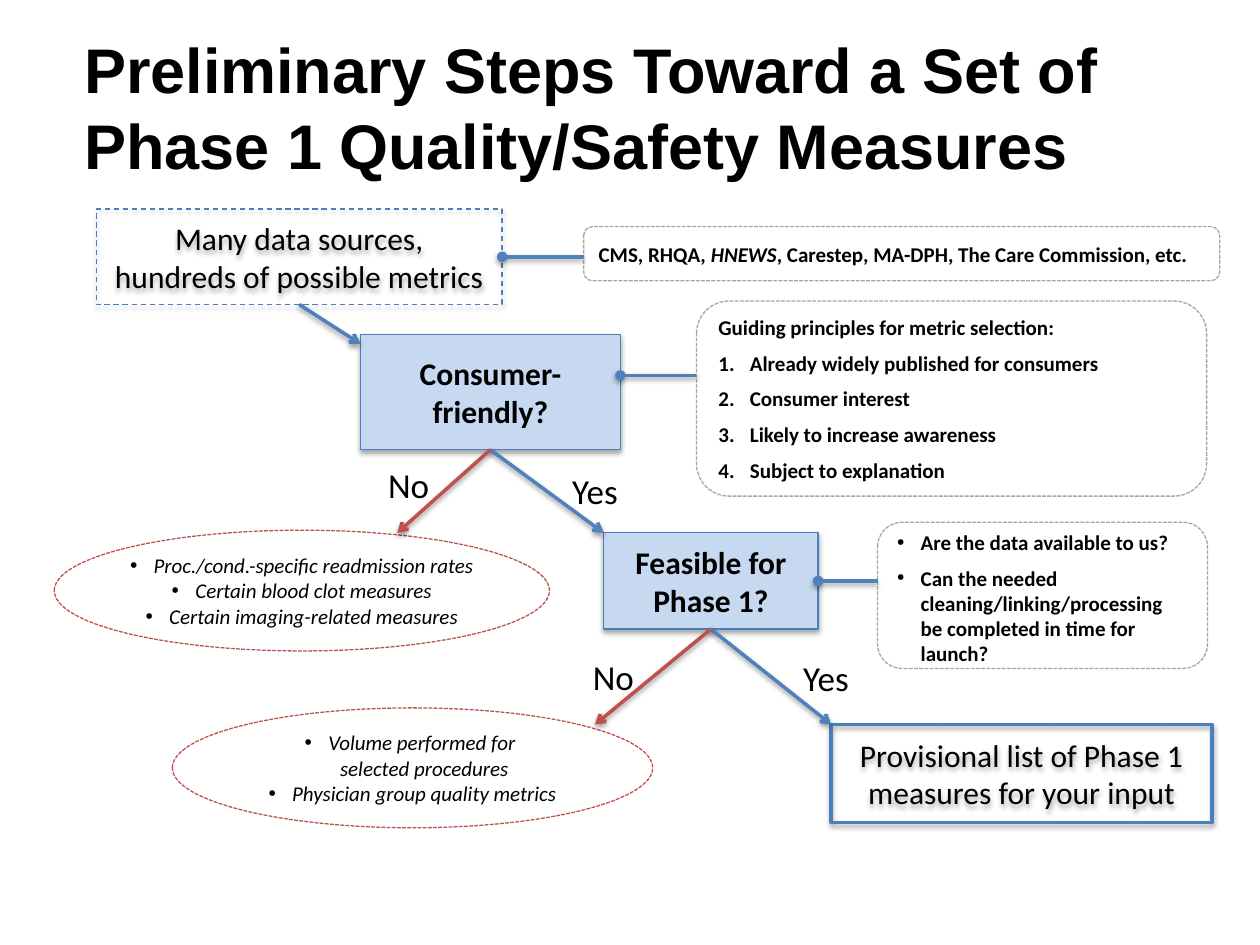
from lxml.etree import SubElement
from pptx import Presentation
from pptx.dml.color import RGBColor
from pptx.enum.dml import MSO_LINE
from pptx.enum.shapes import MSO_CONNECTOR, MSO_SHAPE
from pptx.enum.text import MSO_ANCHOR, PP_ALIGN
from pptx.oxml.ns import qn
from pptx.util import Pt

HUES = {
    "ink": "000000", "pale": "C6D9F1", "edge": "4B7EBC", "blue": "4F81BD",
    "red": "C0504D", "gray": "A6A6A6", "white": "FFFFFF",
}


def hue(name):
    return RGBColor.from_string(HUES[name])


def bullet(para, mark, dent):
    props = para._p.get_or_add_pPr()
    props.set("marL", str(Pt(dent)))
    props.set("indent", str(-Pt(dent)))
    if mark == "1.":
        SubElement(props, qn("a:buFont")).set("typeface", "+mj-lt")
        SubElement(props, qn("a:buAutoNum")).set("type", "arabicPeriod")
    else:
        SubElement(props, qn("a:buFont")).set("typeface", "Arial")
        SubElement(props, qn("a:buChar")).set("char", mark)


def write(shape, items, size=18, face="Calibri", bold=False, slant=False,
          align=PP_ALIGN.CENTER, anchor=MSO_ANCHOR.MIDDLE,
          inset=(7.2, 3.6, 7.2, 3.6), mark=None, start=0, dent=13.5, gap=0):
    frame = shape.text_frame
    frame.word_wrap = True
    frame.vertical_anchor = anchor
    frame.margin_left, frame.margin_top, frame.margin_right, frame.margin_bottom = map(Pt, inset)
    for row, item in enumerate(items):
        para = frame.add_paragraph() if row else frame.paragraphs[0]
        para.alignment = align
        if row and gap:
            para.space_before = Pt(gap)
        if mark and row >= start:
            bullet(para, mark, dent)
        parts = [item] if isinstance(item, str) else item
        for turn, part in enumerate(parts):
            for count, line in enumerate(part.split("\n")):
                if count:
                    para.add_line_break()
                run = para.add_run()
                run.text = line
                font = run.font
                font.name, font.size, font.bold = face, Pt(size), bold
                font.italic = slant or turn % 2 == 1
                font.color.rgb = hue("ink")
        for stop in para._p.findall(qn("a:br")):
            SubElement(stop, qn("a:rPr")).set("sz", str(size * 100))


def shade(effects, far, alpha):
    drop = SubElement(effects, qn("a:outerShdw"), blurRad=str(Pt(3.1)),
                      dist=str(Pt(far)), dir="5400000", rotWithShape="0")
    tone = SubElement(drop, qn("a:srgbClr"), val=HUES["ink"])
    SubElement(tone, qn("a:alpha"), val=str(alpha * 1000))


def outline(slide, kind, box, edge, fill=None, width=0.75, dash=None):
    shape = slide.shapes.add_shape(kind, *map(Pt, box))
    shape.shadow.inherit = False
    if fill:
        shape.fill.solid()
        shape.fill.fore_color.rgb = hue(fill)
    else:
        shape.fill.background()
    shape.line.color.rgb = hue(edge)
    shape.line.width = Pt(width)
    if dash:
        shape.line.dash_style = dash
    return shape


def link(slide, start, end, color, tip):
    line = slide.shapes.add_connector(MSO_CONNECTOR.STRAIGHT, *map(Pt, start + end))
    line.line.color.rgb = hue(color)
    line.line.width = Pt(2)
    SubElement(line.line._ln, qn("a:tailEnd")).set("type", tip)
    shade(SubElement(line._element.spPr, qn("a:effectLst")), 1.6, 38)
    return line


def title(slide, box, words):
    head = slide.shapes.add_textbox(*map(Pt, box))
    write(head, [words], size=36, face="Arial", bold=True, align=PP_ALIGN.LEFT)


def step(slide, box, words, bold=False, **look):
    shape = outline(slide, MSO_SHAPE.RECTANGLE, box, "edge", **look)
    shade(shape._element.spPr.find(qn("a:effectLst")), 1.8, 35)
    write(shape, [words], bold=bold)
    return shape


def note(slide, box, items, **form):
    shape = outline(slide, MSO_SHAPE.ROUNDED_RECTANGLE, box, "gray", dash=MSO_LINE.SQUARE_DOT)
    write(shape, items, size=12, bold=True, align=PP_ALIGN.LEFT, gap=6, **form)


def reject(slide, box, items):
    shape = outline(slide, MSO_SHAPE.OVAL, box, "red", "white", dash=MSO_LINE.SQUARE_DOT)
    write(shape, items, size=12, slant=True, mark="•", inset=(0, 3.6, 0, 3.6))


def fork(slide, box, node, ways):
    x, y, w, h = box
    root = (x + w / 2, y + h)
    for word, color, end, tag, width in ways:
        line = link(slide, root, end, color, "arrow")
        line.begin_connect(node, 2)
        label = slide.shapes.add_textbox(Pt(root[0] + tag[0]), Pt(root[1] + tag[1]),
                                         Pt(width), Pt(31.5))
        write(label, [word], size=20, anchor=MSO_ANCHOR.TOP)


def main():
    deck = Presentation()
    deck.slide_width, deck.slide_height = Pt(720), Pt(540)
    slide = deck.slides.add_slide(deck.slide_layouts[6])

    pool = (55, 119.5, 232, 54.5)
    ask = (206, 191, 148.5, 66)
    test = (345, 304.5, 122.5, 55)
    goal = (475, 414, 217.5, 56)
    cite = (333.5, 129.5, 363.5, 31)
    guide = (398, 172, 291.5, 111.5)
    data = (501.5, 298.5, 188.5, 83.5)

    title(slide, (41, 26.5, 619, 68.5),
          "Preliminary Steps Toward a Set of Phase 1 Quality/Safety Measures")
    source = step(slide, pool, "Many data sources,\nhundreds of possible metrics",
                  dash=MSO_LINE.DASH)
    friend = step(slide, ask, "Consumer-friendly?", bold=True, fill="pale")
    ready = step(slide, test, "Feasible for Phase 1?", bold=True, fill="pale")
    step(slide, goal, "Provisional list of Phase 1 measures for your input", width=2)

    reject(slide, (31, 303, 283, 69), [
        "Proc./cond.-specific readmission rates",
        "Certain blood clot measures",
        "Certain imaging-related measures"])
    reject(slide, (98.5, 404.5, 274.5, 68.5), [
        "Volume performed for \nselected procedures",
        "Physician group quality metrics"])

    note(slide, cite, [("CMS, RHQA, ", "HNEWS",
                        ", Carestep, MA-DPH, The Care Commission, etc.")],
         anchor=MSO_ANCHOR.TOP, inset=(7.2,) * 4)
    note(slide, guide, [
        "Guiding principles for metric selection:",
        "Already widely published for consumers",
        "Consumer interest",
        "Likely to increase awareness",
        "Subject to explanation"], mark="1.", start=1, dent=18)
    note(slide, data, [
        "Are the data available to us?",
        "Can the needed cleaning/linking/processing be completed in time for launch?"],
        mark="•", anchor=MSO_ANCHOR.TOP, inset=(7.2, 0, 7.2, 3.6))

    first = link(slide, (171, 174), (206, 196.5), "blue", "arrow")
    first.begin_connect(source, 2)
    fork(slide, ask, friend, [
        ("Yes", "blue", test[:2], (27, 8), 65.5),
        ("No", "red", (227, 304.5), (-74.5, 4.5), 55.5)])
    fork(slide, test, ready, [
        ("Yes", "blue", goal[:2], (33, 12), 65.5),
        ("No", "red", (340, 414), (-83.5, 11.5), 55.5)])

    for area, box, node in ((cite, pool, source), (data, test, ready)):
        x, y, w, h = box
        level = y + h / 2
        line = link(slide, (area[0], level), (x + w, level), "blue", "oval")
        line.end_connect(node, 3)
    link(slide, (guide[0], 214.5), (ask[0] + ask[2], 214.5), "blue", "oval")

    deck.save("out.pptx")


if __name__ == "__main__":
    main()
